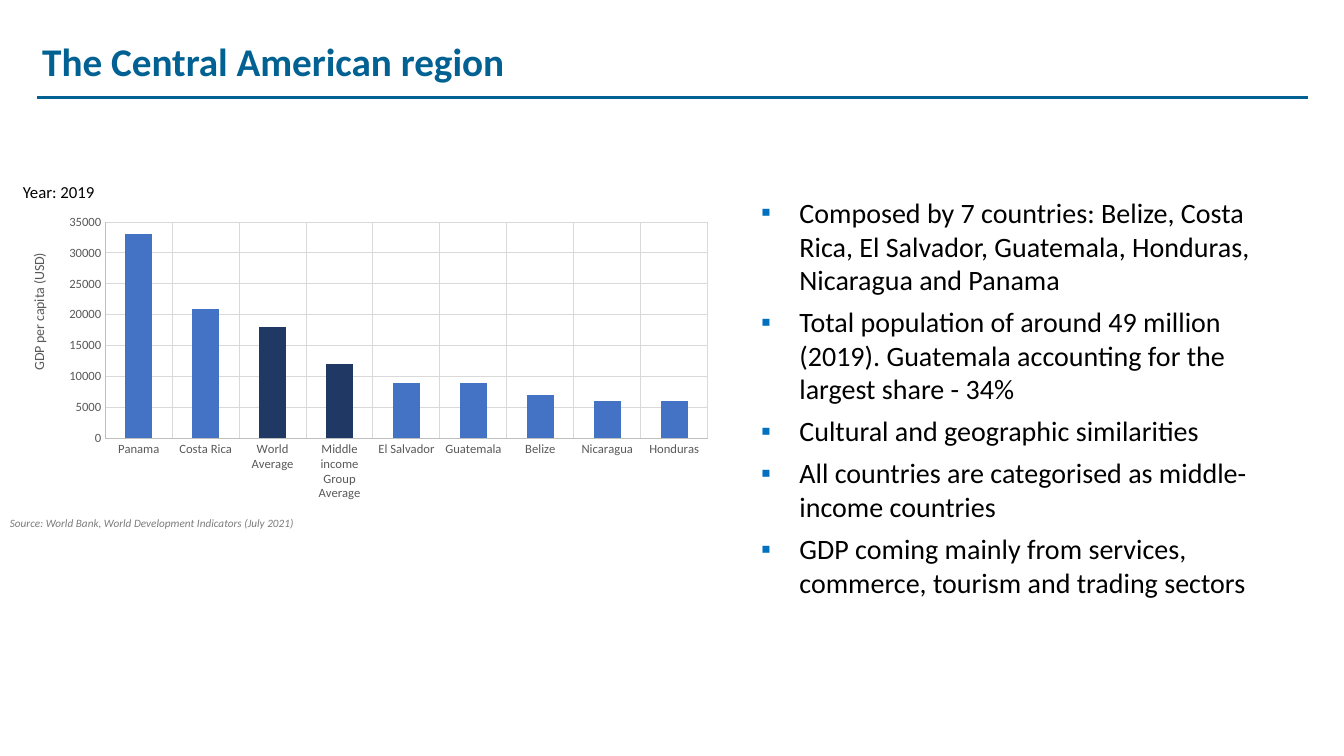
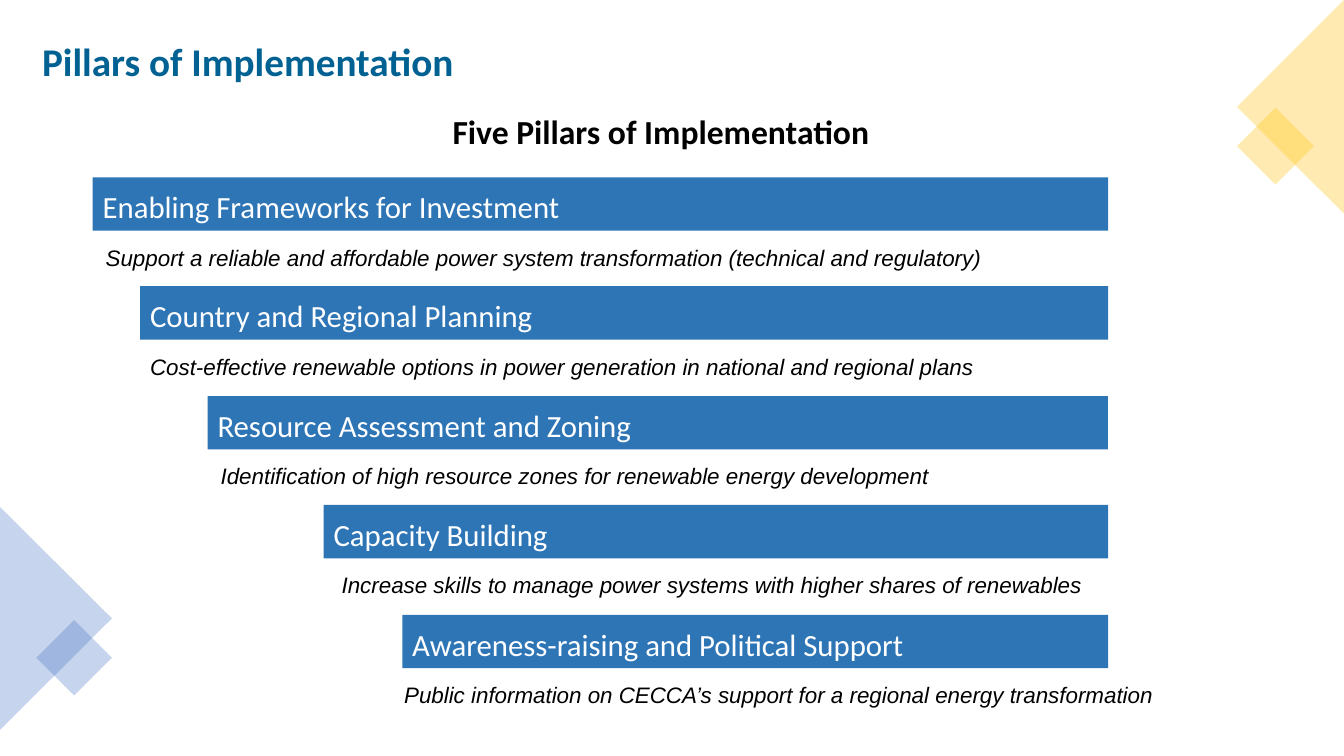
import lxml.etree
import pptx
import pptx.chart.data
import pptx.dml.color
import pptx.enum.chart
import pptx.enum.shapes
import pptx.enum.text
import pptx.oxml.ns
import pptx.util

PX = 9144  # one px is a hundredth of an inch
SLIDE_WIDTH, SLIDE_HEIGHT = 1333, 750

# Shared look
FONT, CAPTION_FONT = "Calibri", "Arial"
TITLE_BLUE, BAR_BLUE, BULLET_BLUE = "006192", "2E75B6", "0070C0"
ACCENT_BLUE, ACCENT_GOLD, AVERAGE_NAVY = "4472C4", "FFC000", "203864"
BLACK, WHITE, LABEL_GREY, SOURCE_GREY = "000000", "FFFFFF", "595959", "7C7C7C"
AXIS_GREY, GRID_GREY = "BFBFBF", "D9D9D9"

SHAPE = pptx.enum.shapes.MSO_SHAPE
ALIGN = pptx.enum.text.PP_ALIGN
ANCHOR = pptx.enum.text.MSO_ANCHOR

# Content
FACTS = [
    "Composed by 7 countries: Belize, Costa Rica, El Salvador, Guatemala, "
    "Honduras, Nicaragua and Panama",
    "Total population of around 49 million (2019). Guatemala accounting for "
    "the largest share - 34%",
    "Cultural and geographic similarities",
    "All countries are categorised as middle-income countries",
    "GDP coming mainly from services, commerce, tourism and trading sectors",
]
GDP = {
    "Panama": 33000, "Costa Rica": 21000, "World Average": 18000,
    "Middle income Group Average": 12000, "El Salvador": 9000,
    "Guatemala": 9000, "Belize": 7000, "Nicaragua": 6000, "Honduras": 6000,
}
# Bar left, bar text, caption left, caption width, caption text
PILLARS = [
    (92, "Enabling Frameworks for Investment", 95, 1007,
     "Support a reliable and affordable power system transformation "
     "(technical and regulatory)"),
    (139, "Country and Regional Planning", 139, 960,
     "Cost-effective renewable options in power generation in national and "
     "regional plans"),
    (206, "Resource Assessment and Zoning", 209, 893,
     "Identification of high resource zones for renewable energy development"),
    (321, "Capacity Building", 329, 770,
     "Increase skills to manage power systems with higher shares of renewables"),
    (399, "Awareness-raising and Political Support", 391, 772,
     "Public information on CECCA’s support for a regional energy transformation"),
]


def color(value):
    return pptx.dml.color.RGBColor.from_string(value)


def place(*lengths):
    return [pptx.util.Emu(length * PX) for length in lengths]


def add_xml(parent, tag, **attributes):
    return lxml.etree.SubElement(parent, pptx.oxml.ns.qn(tag), attributes)


def style_font(font, size, tint, name=FONT, bold=False, italic=False):
    font.name, font.size = name, pptx.util.Pt(size)
    font.bold, font.italic = bold, italic
    font.color.rgb = color(tint)


def write(frame, lines, size, tint, align=ALIGN.LEFT, spacing=1.0, after=0,
          **style):
    """Fill a text frame with one paragraph per line."""
    frame.word_wrap = True
    frame.text = "\n".join(lines)
    for para in frame.paragraphs:
        para.alignment, para.line_spacing = align, spacing
        para.space_after = pptx.util.Pt(after)
        for span in para.runs:
            style_font(span.font, size, tint, **style)


def add_text(page, area, lines, size, tint, **style):
    box = page.shapes.add_textbox(*place(*area))
    write(box.text_frame, lines, size, tint, **style)
    return box


def add_title(page, text):
    box = add_text(page, (32, 18, 1261, 91), [text], 28, TITLE_BLUE,
                   bold=True, spacing=0.9)
    box.text_frame.vertical_anchor = ANCHOR.MIDDLE


def add_title_rule(page):
    rule = page.shapes.add_connector(
        pptx.enum.shapes.MSO_CONNECTOR.STRAIGHT, *place(37, 97, 1297, 97))
    rule.line.color.rgb = color(TITLE_BLUE)
    rule.line.width = pptx.util.Pt(2.25)
    add_xml(rule._element.spPr, "a:effectLst")


def add_bullets(page, area, lines):
    box = add_text(page, area, lines, 20, BLACK, after=6)
    for para in box.text_frame.paragraphs:
        properties = para._p.get_or_add_pPr()
        properties.set("marL", str(88 * PX))
        properties.set("indent", str(-38 * PX))
        tint = add_xml(properties, "a:buClr")
        add_xml(tint, "a:srgbClr", val=BULLET_BLUE)
        add_xml(properties, "a:buFont", typeface="Arial")
        add_xml(properties, "a:buChar", char="▪")


def add_shape(page, kind, area, fill, rotation=0, opacity=100):
    shape = page.shapes.add_shape(kind, *place(*area))
    shape.shadow.inherit = False
    shape.rotation = rotation
    shape.fill.solid()
    shape.fill.fore_color.rgb = color(fill)
    shape.line.fill.background()
    if opacity < 100:
        tint = shape._element.spPr.find(".//" + pptx.oxml.ns.qn("a:srgbClr"))
        add_xml(tint, "a:alpha", val=str(opacity * 1000))
    return shape


def set_layout(parent, index, **settings):
    """Give a chart part a fixed place, in fractions of the chart."""
    for old in parent.findall(pptx.oxml.ns.qn("c:layout")):
        parent.remove(old)
    layout = add_xml(parent, "c:layout")
    parent.insert(index, layout)
    manual = add_xml(layout, "c:manualLayout")
    for name, value in settings.items():
        add_xml(manual, "c:" + name, val=str(value))


def style_axis(axis):
    style_font(axis.tick_labels.font, 9, LABEL_GREY)
    axis.major_tick_mark = pptx.enum.chart.XL_TICK_MARK.NONE
    axis.minor_tick_mark = pptx.enum.chart.XL_TICK_MARK.NONE
    axis.has_major_gridlines = True
    for line, tint in ((axis.format.line, AXIS_GREY),
                       (axis.major_gridlines.format.line, GRID_GREY)):
        line.color.rgb = color(tint)
        line.width = pptx.util.Pt(0.75)


def add_gdp_chart(page, area):
    data = pptx.chart.data.CategoryChartData(number_format="General")
    data.categories = list(GDP)
    data.add_series("Series 1", list(GDP.values()))
    chart = page.shapes.add_chart(
        pptx.enum.chart.XL_CHART_TYPE.COLUMN_CLUSTERED, *place(*area), data).chart
    chart.has_legend = chart.has_title = False
    style_font(chart.font, 10, BLACK)

    # Columns, with the averages darker
    plot = chart.plots[0]
    plot.gap_width, plot.vary_by_categories = 150, False
    series = plot.series[0]
    averages = [series.points[index] for index, name in enumerate(GDP)
                if name.endswith("Average")]
    for part in [series] + averages:
        part.format.fill.solid()
        part.format.fill.fore_color.rgb = color(
            ACCENT_BLUE if part is series else AVERAGE_NAVY)

    # Axes
    for axis in (chart.category_axis, chart.value_axis):
        style_axis(axis)
    values = chart.value_axis
    values.minimum_scale, values.maximum_scale = 0, 35000
    values.major_unit = 5000
    title = values.axis_title
    write(title.text_frame, ["GDP per capita (USD)"], 10, LABEL_GREY,
          align=ALIGN.CENTER)
    body = title._element.find(".//" + pptx.oxml.ns.qn("a:bodyPr"))
    body.set("rot", "-5400000")
    body.set("vert", "horz")
    set_layout(title._element, 1, xMode="edge", yMode="edge", x=0.02, y=0.14)
    set_layout(chart._chartSpace.chart.plotArea, 0, layoutTarget="inner",
               xMode="edge", yMode="edge", x=0.13, y=0.045, w=0.85, h=0.725)


def add_pillar(page, top, left, name, caption_left, caption_width, caption):
    bar = add_shape(page, SHAPE.RECTANGLE, (left, top, 1099 - left, 53), BAR_BLUE)
    write(bar.text_frame, [name], 22, WHITE, spacing=1.15, after=10)
    bar.text_frame.vertical_anchor = ANCHOR.TOP
    add_text(page, (caption_left, top + 61, caption_width, 37), [caption], 16,
             BLACK, name=CAPTION_FONT, italic=True)


def add_corners(page):
    for kind, area, tint, rotation in (
            (SHAPE.ISOSCELES_TRIANGLE, (-55, 558, 221, 111), ACCENT_BLUE, 90),
            (SHAPE.RECTANGLE, (47, 626, 53, 53), ACCENT_BLUE, 45),
            (SHAPE.RECTANGLE, (1238, 118, 54, 54), ACCENT_GOLD, 45),
            (SHAPE.ISOSCELES_TRIANGLE, (1174, 53, 212, 106), ACCENT_GOLD, 270)):
        add_shape(page, kind, area, tint, rotation, opacity=30)


def build_region(page):
    add_title_rule(page)
    add_title(page, "The Central American region")
    add_bullets(page, (695, 189, 599, 456), FACTS)
    add_gdp_chart(page, (13, 207, 703, 296))
    add_text(page, (0, 507, 416, 24),
             ["Source: World Bank, World Development Indicators (July 2021)"],
             8, SOURCE_GREY, italic=True)
    add_text(page, (13, 175, 170, 30), ["Year: 2019"], 12, BLACK)


def build_pillars(page):
    add_corners(page)
    add_title(page, "Pillars of Implementation")
    add_text(page, (53, 105, 1205, 551), ["Five Pillars of Implementation"], 24,
             BLACK, bold=True, align=ALIGN.CENTER, after=18)
    for row, pillar in enumerate(PILLARS):
        add_pillar(page, 176 + row * 217 // 2, *pillar)


def main():
    deck = pptx.Presentation()
    deck.slide_width, deck.slide_height = place(SLIDE_WIDTH, SLIDE_HEIGHT)
    for build in (build_region, build_pillars):
        build(deck.slides.add_slide(deck.slide_layouts[6]))
    deck.save("out.pptx")


if __name__ == "__main__":
    main()
